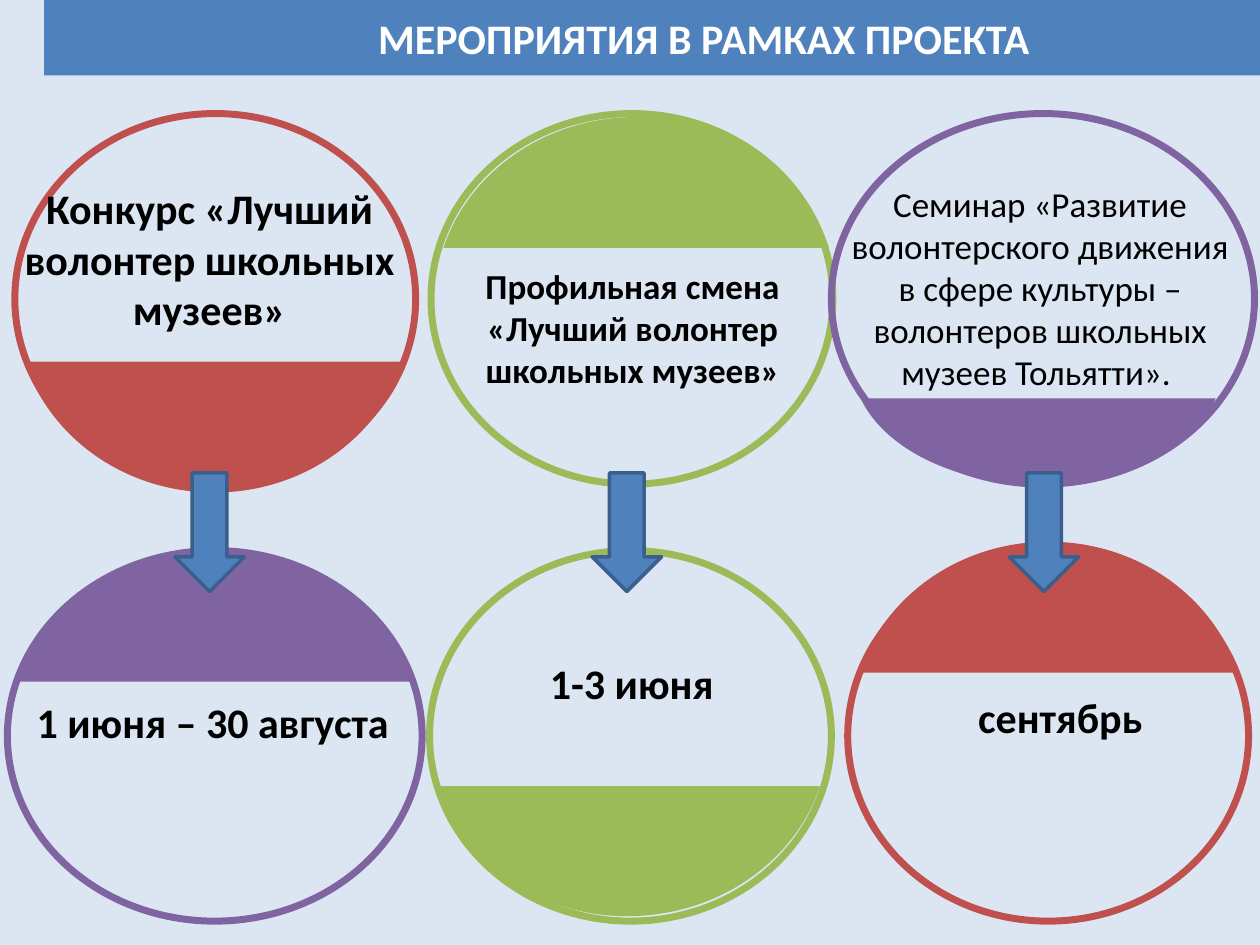
from dataclasses import dataclass

from pptx import Presentation
from pptx.dml.color import RGBColor
from pptx.enum import shapes, text
from pptx.oxml.ns import qn
from pptx.util import Cm, Pt


@dataclass(frozen=True)
class Theme:
    font: str = "Calibri"
    background: str = "DCE6F2"
    blue: str = "4F81BD"
    dark_blue: str = "3A5F8C"
    red: str = "C0504D"
    green: str = "9BBB59"
    purple: str = "8064A2"
    black: str = "000000"
    white: str = "FFFFFF"
    large: int = 24
    small: int = 20


theme = Theme()


def write(sp, words, size=theme.large, color=theme.black, bold=True, wrap=True,
          align=text.PP_ALIGN.CENTER):
    tf = sp.text_frame
    tf.word_wrap = wrap
    tf.auto_size = text.MSO_AUTO_SIZE.SHAPE_TO_FIT_TEXT
    tf.vertical_anchor = text.MSO_ANCHOR.TOP
    p = tf.paragraphs[0]
    p.alignment = align
    r = p.add_run()
    r.text = words
    r.font.name = theme.font
    r.font.size = Pt(size)
    r.font.bold = bold
    r.font.color.rgb = RGBColor.from_string(color)


def paint(sp, fill=None, line=None, width=0):
    sp.shadow.inherit = False
    if fill:
        sp.fill.solid()
        sp.fill.fore_color.rgb = RGBColor.from_string(fill)
    else:
        sp.fill.background()
    if line:
        sp.line.color.rgb = RGBColor.from_string(line)
        sp.line.width = Pt(width)
    else:
        sp.line.fill.background()


prs = Presentation()
prs.slide_width, prs.slide_height = Cm(25.4), Cm(19.05)
s = prs.slides.add_slide(prs.slide_layouts[5])
s.background.fill.solid()
s.background.fill.fore_color.rgb = RGBColor.from_string(theme.background)

# Bezier points of a unit cap, from the right end of its chord over the tip to the left end
right_half = [(1, 0), (0.87, 0.58), (0.47, 1), (0, 1)]
cap_outline = right_half + [(-x, y) for x, y in reversed(right_half[:-1])]

# Circle: left, top, width. Cap: left, chord, width, depth (negative points up).
circle_height = 7.47
top_row, bottom_row = 2.29, 11.1
circles = [
    (theme.red, (0.3, top_row, 8.08), (0.5, 7.29, 7.64, 2.64)),
    (theme.green, (8.69, top_row, 8.1), (8.94, 5, 7.77, -2.64)),
    (theme.purple, (16.76, top_row, 8.53), (17.35, 8.03, 7.16, 1.73)),
    (theme.red, (17.09, bottom_row, 8.08), (17.32, 13.56, 7.64, -2.64)),
    (theme.green, (8.66, bottom_row, 8.1), (8.76, 15.85, 7.77, 2.62)),
    (theme.purple, (0.15, bottom_row, 8.36), (0.36, 13.74, 8, -2.62)),
]
for color, (left, top, width), (cap_left, chord, cap_width, depth) in circles:
    ring = s.shapes.add_shape(shapes.MSO_SHAPE.OVAL, Cm(left), Cm(top),
                              Cm(width), Cm(circle_height))
    paint(ring, line=color, width=4)
    half = cap_width / 2
    points = [(Cm(cap_left + half + x * half), Cm(chord + y * depth))
              for x, y in cap_outline]
    builder = s.shapes.build_freeform(*points[0])
    builder.add_line_segments(points[1:], close=True)
    cap = builder.convert_to_shape()
    paint(cap, fill=color)
    # Each three line segments become one curve
    segments = list(cap.element.iter(qn("a:lnTo")))
    for i in range(0, len(segments), 3):
        curve = segments[i].makeelement(qn("a:cubicBezTo"))
        segments[i].addprevious(curve)
        for segment in segments[i:i + 3]:
            curve.append(segment[0])
            segment.getparent().remove(segment)

bar = s.shapes.add_shape(shapes.MSO_SHAPE.RECTANGLE, Cm(0.89), Cm(0), Cm(24.51), Cm(1.52))
paint(bar, fill=theme.blue)

title = s.shapes.title
title.left, title.top, title.width, title.height = Cm(7.37), Cm(0.13), Cm(13.77), Cm(1.3)
write(title, "МЕРОПРИЯТИЯ В РАМКАХ ПРОЕКТА", color=theme.white, wrap=False,
      align=text.PP_ALIGN.LEFT)
s.shapes.element.append(title.element)  # bring the title in front of the bar

captions = [
    ("Конкурс «Лучший волонтер школьных музеев»",
     (0.2, 3.56, 8.05, 3.33), {}),
    ("Профильная смена «Лучший волонтер школьных музеев»",
     (9.25, 5.21, 7.01, 2.82), {"size": theme.small}),
    ("Семинар «Развитие волонтерского движения в сфере культуры – "
     "волонтеров школьных музеев Тольятти». ",
     (16.87, 3.56, 8.2, 4.52), {"size": theme.small, "bold": False}),
    ("1 июня – 30 августа ", (0.36, 13.92, 8.05, 2.31), {}),
    ("1-3 июня", (8.71, 13.13, 8.05, 1.3), {}),
    ("сентябрь", (17.35, 13.82, 8.05, 1.3), {}),
]
for words, box, style in captions:
    write(s.shapes.add_textbox(*map(Cm, box)), words, **style)

for column in range(3):
    arrow = s.shapes.add_shape(shapes.MSO_SHAPE.RIGHT_ARROW, Cm(3.03 + 8.41 * column),
                               Cm(10.03), Cm(2.39), Cm(1.4))
    arrow.rotation = 90
    paint(arrow, fill=theme.blue, line=theme.dark_blue, width=2)

prs.save("out.pptx")
